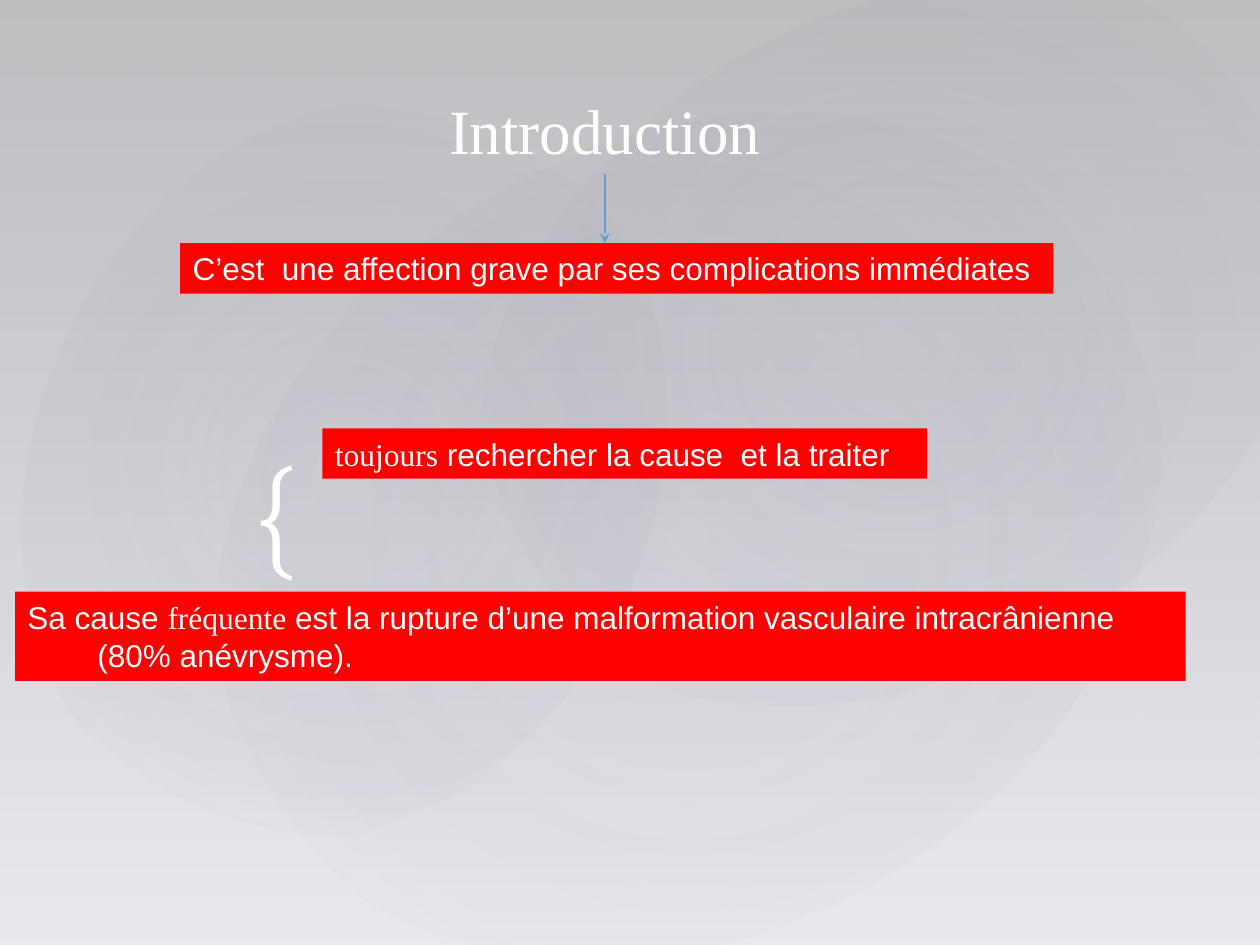
import pptx
import pptx.util
import pptx.dml.color
import pptx.enum.shapes
import pptx.enum.text
import pptx.oxml
import pptx.oxml.ns

Pt = pptx.util.Pt
RGB = pptx.dml.color.RGBColor.from_string
KIND = pptx.enum.shapes.MSO_SHAPE
ALIGN = pptx.enum.text.PP_ALIGN
ANCHOR = pptx.enum.text.MSO_ANCHOR

THEME = {
    "sans": "Arial", "serif": "Times New Roman", "brace": "TeX Gyre Pagella",
    "text": "FFFFFF", "bar": "FF0000", "line": "629DD1",
    "dusk": "504652", "navy": "242852", "glow": "C3BCC5",
    "title": 36, "body": 18, "sign": 66,
}

# Content: boxes are left, top, width, height in points
PAGE = (0, 0, 720, 540)
ORBS = [  # box, turn, opacity of the centre
    ((108, 82.1, 570.2, 449.3), 328.7, 7),
    ((-21.6, 92.2, 436.3, 352.8), 294.3, 8),
    ((257.8, 9.4, 510.5, 374.4), 328.7, 8),
]
TITLE = ((212.4, 49, 266.4, 50.4), [("Introduction", "serif")])
BRACE = ((144, 248.4, 36, 81.4), [("{", "brace")])
BARS = [  # box, runs, hanging indent
    ((184.3, 244.8, 345.6, 28.8),
     [("toujours", "serif"), (" rechercher la cause  et la traiter", "sans")], 0),
    ((103, 139, 499, 28.8),
     [("C’est  une affection grave par ses complications immédiates", "sans")], 0),
    ((8.6, 338, 668.9, 51.1),
     [("Sa cause ", "sans"), ("fréquente", "serif"),
      (" est la rupture d’une malformation vasculaire intracrânienne"
       " (80% anévrysme).", "sans")], 40),
]
ARROW_END = 139

deck = pptx.Presentation()
deck.slide_width, deck.slide_height = Pt(PAGE[2]), Pt(PAGE[3])
slide = deck.slides.add_slide(deck.slide_layouts[6])
shapes = slide.shapes


def place(box):
    return [Pt(v) for v in box]


def add_shape(kind, box):
    shape = shapes.add_shape(kind, *place(box))
    shape.shadow.inherit = False
    shape.line.fill.background()
    return shape


def fade(shape, stops, way):
    """Fill with a gradient of (place, colour, opacity) stops, in percent."""
    marks = "".join(
        f'<a:gs pos="{pos * 1000}"><a:srgbClr val="{THEME[name]}">'
        f'<a:alpha val="{alpha * 1000}"/></a:srgbClr></a:gs>'
        for pos, name, alpha in stops)
    space = pptx.oxml.ns.nsdecls("a")
    fill = pptx.oxml.parse_xml(
        f'<a:gradFill {space} rotWithShape="1"><a:gsLst>{marks}</a:gsLst>{way}</a:gradFill>')
    shape.fill.background()
    props = shape._element.spPr
    props.replace(props.find(pptx.oxml.ns.qn("a:noFill")), fill)


def write(shape, runs, size, align=ALIGN.LEFT, hang=0):
    frame = shape.text_frame
    frame.word_wrap = True
    frame.vertical_anchor = ANCHOR.TOP
    par = frame.paragraphs[0]
    par.alignment = align
    if hang:
        props = par._p.get_or_add_pPr()
        props.set("marL", str(Pt(hang)))
        props.set("indent", str(-Pt(hang)))
    for text, face in runs:
        run = par.add_run()
        run.text = text
        run.font.name = THEME[face]
        run.font.size = Pt(THEME[size])
        run.font.color.rgb = RGB(THEME["text"])
    return frame


# Backdrop
slide.background.fill.solid()
slide.background.fill.fore_color.rgb = RGB("FFFFFF")
fade(add_shape(KIND.RECTANGLE, PAGE), [(0, "dusk", 36), (100, "navy", 10)],
     '<a:lin ang="5400000" scaled="0"/>')
for box, turn, alpha in ORBS:
    orb = add_shape(KIND.OVAL, box)
    orb.rotation = turn
    fade(orb, [(0, "glow", alpha), (58, "navy", 0), (100, "navy", 0)],
         '<a:path path="circle"><a:fillToRect l="50000" t="50000" r="50000" b="50000"/></a:path>')

# Brace
box, runs = BRACE
frame = write(shapes.add_textbox(*place(box)), runs, "sign")
frame.vertical_anchor = ANCHOR.MIDDLE
frame.margin_left = frame.margin_right = 0
frame.margin_top = frame.margin_bottom = Pt(0.72)

# Title
box, runs = TITLE
title = shapes.add_textbox(*place(box))
write(title, runs, "title", ALIGN.CENTER)

# Red bars
for box, runs, hang in BARS:
    bar = add_shape(KIND.RECTANGLE, box)
    bar.fill.solid()
    bar.fill.fore_color.rgb = RGB(THEME["bar"])
    write(bar, runs, "body", hang=hang)

# Arrow from the title down to the first statement
mid = title.left + title.width // 2
arrow = shapes.add_connector(pptx.enum.shapes.MSO_CONNECTOR.STRAIGHT,
                             mid, title.top + title.height, mid, Pt(ARROW_END))
arrow.begin_connect(title, 2)
arrow.line.color.rgb = RGB(THEME["line"])
arrow.line.width = Pt(1)
space = pptx.oxml.ns.nsdecls("a")
arrow.line._get_or_add_ln().append(
    pptx.oxml.parse_xml(f'<a:tailEnd {space} type="stealth"/>'))
arrow._element.spPr.append(pptx.oxml.parse_xml(f"<a:effectLst {space}/>"))

deck.save("out.pptx")
